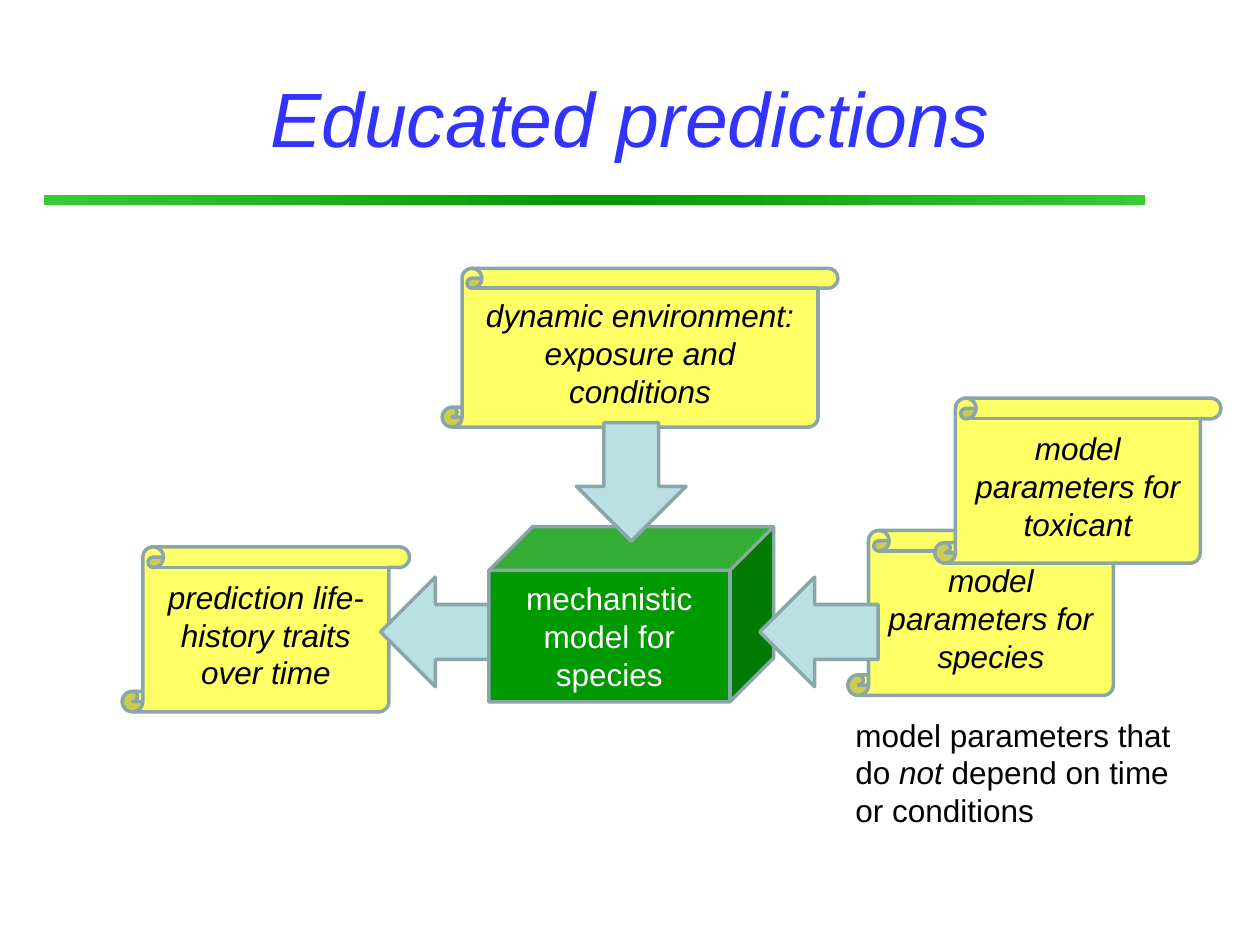
from copy import deepcopy

from pptx import Presentation
from pptx import util as u
from pptx.dml.color import RGBColor
from pptx.enum import shapes, text

COLS, ROWS = 100, 75
SHAPE = shapes.MSO_SHAPE
GREEN, LIGHT_GREEN, YELLOW, PALE_BLUE = "009900", "33CC33", "FFFF66", "BBE0E3"
BLUE, GREY, BLACK, WHITE = "3333FF", "8AA6A8", "000000", "FFFFFF"

prs = Presentation()
prs.slide_width, prs.slide_height = u.Inches(10), u.Inches(7.5)


def rgb(value):
    return RGBColor.from_string(value)


def grid(box):
    """Turn left, top, width, height in grid cells into slide lengths."""
    cell_w, cell_h = prs.slide_width / COLS, prs.slide_height / ROWS
    return [round(n * c) for n, c in zip(box, (cell_w, cell_h) * 2)]


def within(region, box):
    """Shift a box by the corner of the region that holds it."""
    return (region[0] + box[0], region[1] + box[1], *box[2:])


def style(font, color, **values):
    font.color.rgb = rgb(color)
    for name, value in {"name": "Arial", "size": u.Pt(18), **values}.items():
        setattr(font, name, value)


def add_block(s, kind, box, fill, words="", color=BLACK, italic=False, rotation=0):
    sp = s.shapes.add_shape(kind, *grid(box))
    sp.shadow.inherit = False
    sp.rotation = rotation
    sp.fill.solid()
    sp.fill.fore_color.rgb = rgb(fill)
    sp.line.color.rgb = rgb(GREY)
    sp.line.width = u.Pt(2)
    if words:
        tf = sp.text_frame
        tf.text = words
        tf.word_wrap = True
        tf.vertical_anchor = text.MSO_ANCHOR.MIDDLE
        for p in tf.paragraphs:
            p.alignment = text.PP_ALIGN.CENTER
            style(p.runs[0].font, color, italic=italic)


def add_scroll(s, box, words):
    add_block(s, SHAPE.VERTICAL_SCROLL, box, YELLOW, words, italic=True)


def add_arrow(s, region, corner, rotation):
    box = within(region, (*corner, 9.4, 8.7))
    add_block(s, SHAPE.RIGHT_ARROW, box, PALE_BLUE, rotation=rotation)


def add_rule(s, box):
    """Draw a bar that is darkest in its middle."""
    sp = s.shapes.add_shape(SHAPE.RECTANGLE, *grid(box))
    sp.shadow.inherit = False
    sp.line.fill.background()
    sp.fill.gradient()
    sp.fill.gradient_angle = 0
    stops = sp.fill.gradient_stops
    for stop, color, position in zip(stops, (LIGHT_GREEN, GREEN), (0, 0.5)):
        stop.color.rgb = rgb(color)
        stop.position = position
    stop_list = sp.fill._fill._gradFill.gsLst
    last = deepcopy(stop_list[0])
    last.set("pos", "100000")
    stop_list.append(last)


def add_header(s, region, words):
    title = s.shapes.title
    title.left, title.top, title.width, title.height = grid(
        within(region, (1.5, 0, 90, 12.5)))
    tf = title.text_frame
    tf.text = words
    tf.vertical_anchor = text.MSO_ANCHOR.MIDDLE
    p = tf.paragraphs[0]
    p.alignment = text.PP_ALIGN.CENTER
    style(p.runs[0].font, BLUE, size=u.Pt(44), italic=True)
    add_rule(s, within(region, (0, 12.5, 87.4, 0.75)))


def add_note(s, box, parts):
    tf = s.shapes.add_textbox(*grid(box)).text_frame
    tf.word_wrap = True
    for words, italic in parts:
        r = tf.paragraphs[0].add_run()
        r.text = words
        style(r.font, BLACK, italic=italic)


def add_prediction(s, region):
    add_scroll(s, within(region, (0, 0, 22.8, 13.1)),
               "prediction life-history traits over time")
    add_arrow(s, region, (20.5, 2.4), 180)


def add_model(s, region):
    add_block(s, SHAPE.CUBE, within(region, (3.7, 20.5, 22.6, 13.9)), GREEN,
              "mechanistic\nmodel for\nspecies", WHITE)
    add_scroll(s, within(region, (0, 0, 31.4, 12.6)),
               "dynamic environment: exposure and conditions")
    add_arrow(s, region, (10.3, 12.6), 90)


def add_parameters(s, region):
    for corner, subject in (((0, 10.5), "species"), ((6.9, 0), "toxicant")):
        add_scroll(s, within(region, (*corner, 22.7, 13.1)),
                   f"model parameters for {subject}")
    add_note(s, within(region, (-0.4, 24.7, 27.2, 10.1)),
             [("model parameters that do ", False), ("not", True),
              (" depend on time or conditions", False)])


def main():
    s = prs.slides.add_slide(prs.slide_layouts[5])
    add_header(s, (3.5, 3), "Educated predictions")
    add_prediction(s, (9.7, 43.4))
    add_parameters(s, (67.3, 31.6))
    add_model(s, (35.1, 21.3))
    add_arrow(s, (60.3, 45.8), (0, 0), 180)
    prs.save("out.pptx")


if __name__ == "__main__":
    main()
